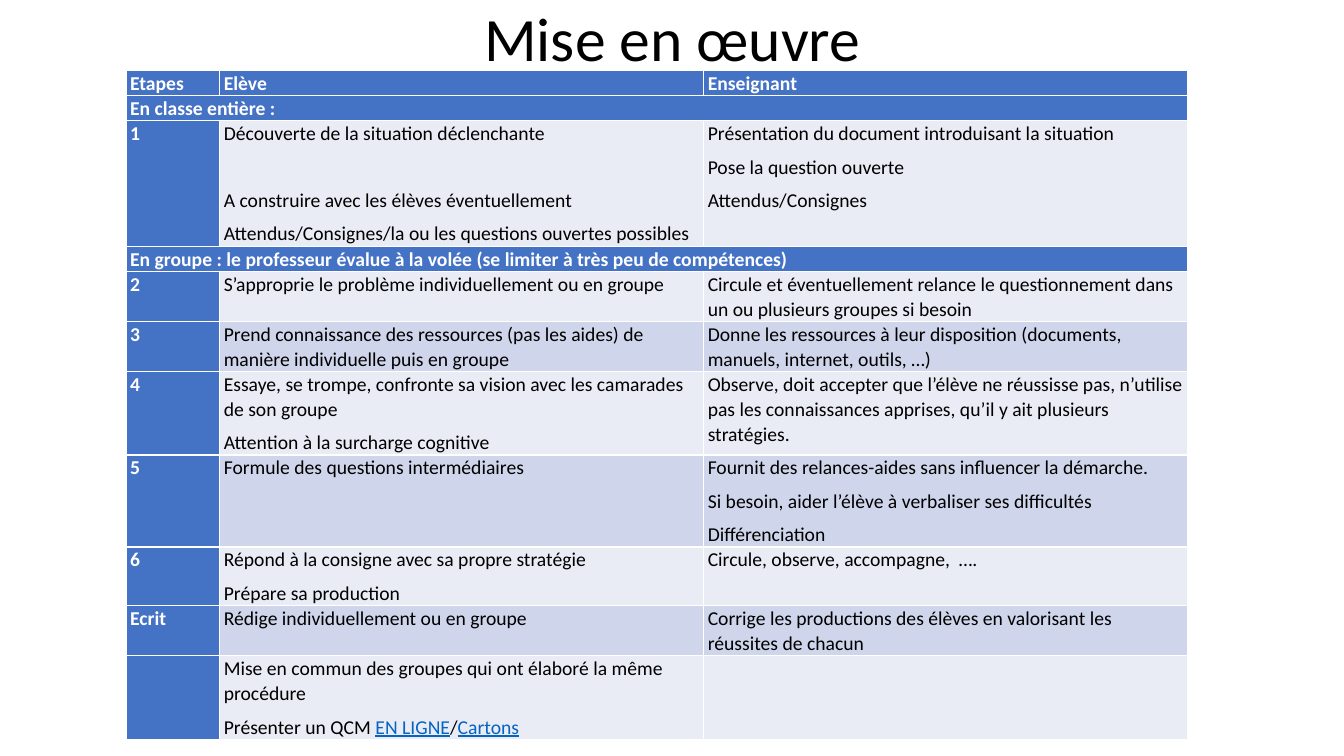
from pptx import Presentation
from pptx.dml.color import RGBColor
from pptx.enum.text import MSO_ANCHOR, MSO_AUTO_SIZE, PP_ALIGN
from pptx.util import Inches, Pt

COLORS = {"head": "4472C4", "light": "E9EBF5", "dark": "CFD5EA",
          "white": "FFFFFF", "black": "000000", "link": "0563C1"}
LINE, GAP = 17.9, 6  # text line and paragraph gap, in points
COLS = [0.93, 4.8, 4.8]


def add_run(p, text, size=14, color="black", bold=False, underline=False):
    r = p.add_run()
    r.text = text
    f = r.font
    f.name, f.size, f.bold, f.underline = "Calibri", Pt(size), bold, underline
    f.color.rgb = RGBColor.from_string(COLORS[color])


def fill_cell(cell, fill, paragraphs, **fmt):
    """Each paragraph is a string or a list of (text, format) runs."""
    cell.fill.solid()
    cell.fill.fore_color.rgb = RGBColor.from_string(COLORS[fill])
    cell.margin_left = cell.margin_right = Inches(0.04)
    cell.margin_top = cell.margin_bottom = 0
    tf = cell.text_frame
    for i, runs in enumerate(paragraphs):
        p = tf.add_paragraph() if i else tf.paragraphs[0]
        p.line_spacing, p.space_after = 1.05, Pt(GAP)
        for text, own in [(runs, {})] if isinstance(runs, str) else runs:
            add_run(p, text, **{**fmt, **own})


link = {"color": "link", "underline": True}
# (lines, gaps, fill, step, pupil, teacher); a banner has no pupil or teacher
rows = [
    (1, 0, "head", "Etapes", ["Elève"], ["Enseignant"]),
    (1, 0, "head", "En classe entière :", None, None),
    (4, 3, "light", "1",
     ["Découverte de la situation déclenchante",
      "A construire avec les élèves éventuellement",
      "Attendus/Consignes/la ou les questions ouvertes possibles"],
     ["Présentation du document introduisant la situation",
      "Pose la question ouverte", "Attendus/Consignes"]),
    (1, 0, "head", "En groupe : le professeur évalue à la volée "
     "(se limiter à très peu de compétences)", None, None),
    (2, 0, "light", "2",
     ["S’approprie le problème individuellement ou en groupe"],
     ["Circule et éventuellement relance le questionnement dans "
      "un ou plusieurs groupes si besoin"]),
    (2, 0, "dark", "3",
     ["Prend connaissance des ressources (pas les aides) de "
      "manière individuelle puis en groupe"],
     ["Donne les ressources à leur disposition (documents, "
      "manuels, internet, outils, …)"]),
    (3, 1, "light", "4",
     ["Essaye, se trompe, confronte sa vision avec les camarades "
      "de son groupe", "Attention à la surcharge cognitive"],
     ["Observe, doit accepter que l’élève ne réussisse pas, "
      "n’utilise pas les connaissances apprises, qu’il y ait "
      "plusieurs stratégies."]),
    (3, 2, "dark", "5",
     ["Formule des questions intermédiaires"],
     ["Fournit des relances-aides sans influencer la démarche.",
      "Si besoin, aider l’élève à verbaliser ses difficultés",
      "Différenciation"]),
    (2, 1, "light", "6",
     ["Répond à la consigne avec sa propre stratégie",
      "Prépare sa production"],
     ["Circule, observe, accompagne,  …."]),
    (2, 0, "dark", "Ecrit",
     ["Rédige individuellement ou en groupe"],
     ["Corrige les productions des élèves en valorisant les "
      "réussites de chacun"]),
    (3, 1, "light", "",
     ["Mise en commun des groupes qui ont élaboré la même procédure",
      [("Présenter un QCM ", {}), ("EN LIGNE", link), ("/", {}),
       ("Cartons", link)]], []),
]

prs = Presentation()
prs.slide_width, prs.slide_height = Inches(13.33), Inches(7.5)
s = prs.slides.add_slide(prs.slide_layouts[5])

title = s.shapes.title
title.left, title.top = Inches(0.92), 0
title.width, title.height = Inches(11.5), Inches(0.82)
tf = title.text_frame
tf.auto_size, tf.vertical_anchor = MSO_AUTO_SIZE.NONE, MSO_ANCHOR.MIDDLE
p = tf.paragraphs[0]
p.alignment, p.line_spacing = PP_ALIGN.CENTER, 0.9
add_run(p, "Mise en œuvre", size=44)

heights = [Pt(LINE * row[0] + GAP * row[1]) for row in rows]
table = s.shapes.add_table(len(rows), len(COLS), Inches(1.25), Inches(0.7),
                           Inches(sum(COLS)), sum(heights)).table
table.first_col = True
for column, width in zip(table.columns, COLS):
    column.width = Inches(width)

for i, (lines, gaps, fill, step, pupil, teacher) in enumerate(rows):
    table.rows[i].height = heights[i]
    head = {"color": "white", "bold": True}
    fill_cell(table.cell(i, 0), "head", [step] if step else [], **head)
    if pupil is None:
        table.cell(i, 0).merge(table.cell(i, 2))
        continue
    fmt = head if fill == "head" else {}
    for j, paragraphs in enumerate([pupil, teacher], 1):
        fill_cell(table.cell(i, j), fill, paragraphs, **fmt)

# The discovery line stands one line apart from what follows
discovery = table.cell(2, 1).text_frame.paragraphs[0]
discovery.space_after = Pt(LINE + 2 * GAP)

prs.save("out.pptx")
